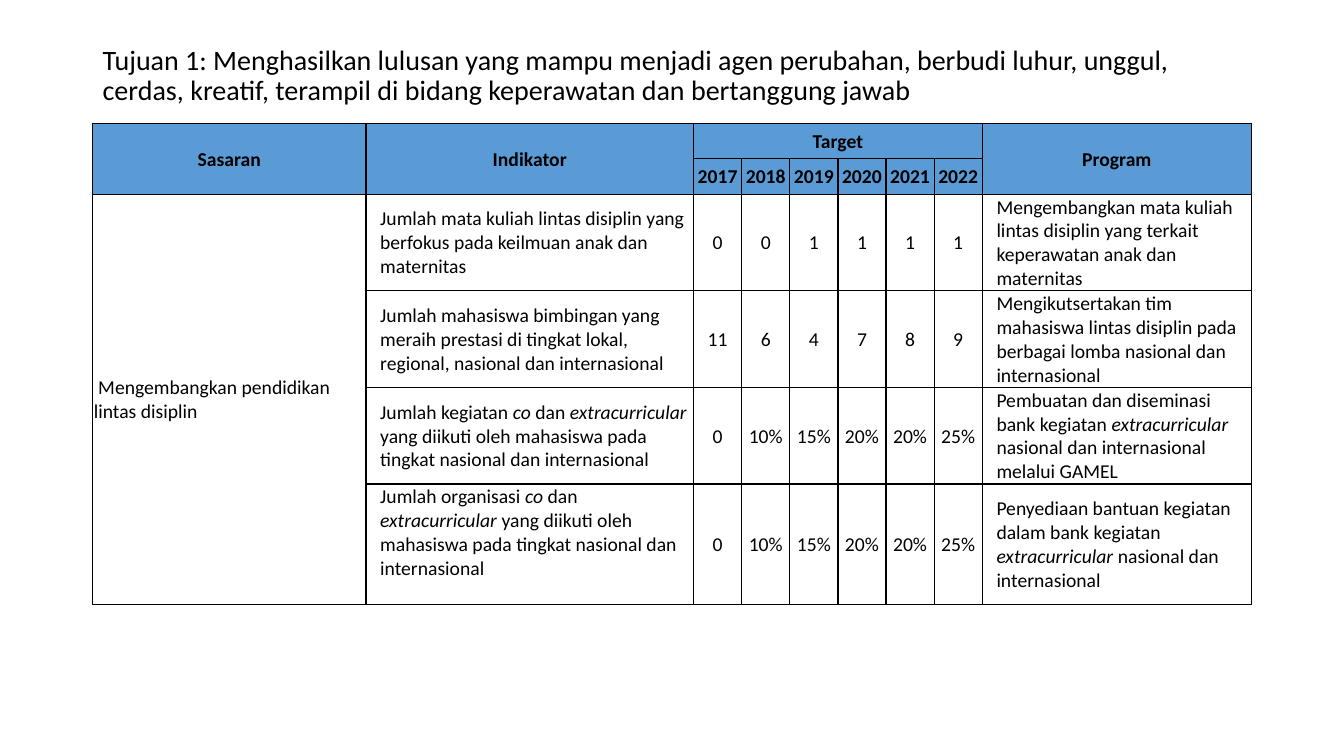
"""Build a slide with a table of goals, indicators, yearly targets and programmes."""
from dataclasses import dataclass

from lxml.etree import SubElement
from pptx import Presentation
from pptx.dml.color import RGBColor as Color
from pptx.enum.text import MSO_ANCHOR as Anchor, PP_ALIGN as Align
from pptx.oxml.ns import qn
from pptx.slide import Slide
from pptx.table import Table, _Cell as Cell
from pptx.text.text import _Paragraph as Paragraph
from pptx.util import Inches, Pt

COLORS = {"ink": "000000", "header": "5B9BD5"}
FONT = "Calibri"
SLIDE_WIDTH, SLIDE_HEIGHT = Inches(13.33), Inches(7.5)

LEFT, CONTENT_WIDTH = 6.9, 86.25
TITLE_TOP, TITLE_HEIGHT = 5.33, 9.47
TABLE_TOP = 16.3
YEARS = [str(year) for year in range(2017, 2023)]
FIRST_YEAR, PROGRAM = 2, 2 + len(YEARS)
COLUMNS = [20.33, 24.38] + [3.58] * len(YEARS) + [20.03]
ROWS = [4.7] * 2 + [12.78] * 3 + [15.9]
INDENT, CELL_MARGIN = 0.98, 0.08

TITLE = (
    "Tujuan 1: Menghasilkan lulusan yang mampu menjadi agen perubahan, berbudi luhur, "
    "unggul, cerdas, kreatif, terampil di bidang keperawatan dan bertanggung jawab"
)
GOAL = " Mengembangkan pendidikan lintas disiplin"


@dataclass
class Header:
    text: str
    row: int
    column: int
    last_row: int
    last_column: int


@dataclass
class Indicator:
    text: str
    targets: list[str]
    program: str
    anchor: Anchor = Anchor.MIDDLE


HEADERS = [
    Header("Sasaran", 0, 0, 1, 0),
    Header("Indikator", 0, 1, 1, 1),
    Header("Target", 0, FIRST_YEAR, 0, PROGRAM - 1),
    Header("Program", 0, PROGRAM, 1, PROGRAM),
] + [Header(year, 1, column, 1, column) for column, year in enumerate(YEARS, FIRST_YEAR)]

GROWTH = ["0", "10%", "15%", "20%", "20%", "25%"]
INDICATORS = [
    Indicator(
        "Jumlah mata kuliah lintas disiplin yang berfokus pada keilmuan anak dan maternitas",
        ["0", "0", "1", "1", "1", "1"],
        "Mengembangkan mata kuliah lintas disiplin yang terkait keperawatan anak dan maternitas",
    ),
    Indicator(
        "Jumlah mahasiswa bimbingan yang meraih prestasi di tingkat lokal, regional, "
        "nasional dan internasional",
        ["11", "6", "4", "7", "8", "9"],
        "Mengikutsertakan tim mahasiswa lintas disiplin pada berbagai lomba nasional "
        "dan internasional",
    ),
    Indicator(
        "Jumlah kegiatan *co *dan *extracurricular* yang diikuti oleh mahasiswa pada "
        "tingkat nasional dan internasional",
        GROWTH,
        "Pembuatan dan diseminasi bank kegiatan *extracurricular *nasional dan "
        "internasional melalui GAMEL",
    ),
    Indicator(
        "Jumlah organisasi *co *dan *extracurricular* yang diikuti oleh mahasiswa pada "
        "tingkat nasional dan internasional",
        GROWTH,
        "Penyediaan bantuan kegiatan dalam bank kegiatan *extracurricular *nasional dan "
        "internasional",
        Anchor.TOP,
    ),
]


def across(percent: float) -> int:
    """Turn a percentage of the slide width into a length."""
    return round(SLIDE_WIDTH * percent / 100)


def down(percent: float) -> int:
    """Turn a percentage of the slide height into a length."""
    return round(SLIDE_HEIGHT * percent / 100)


def write(paragraph: Paragraph, text: str, size: int, bold: bool = False) -> None:
    """Write text whose parts between asterisks are italic."""
    for index, part in enumerate(text.split("*")):
        run = paragraph.add_run()
        run.text = part
        if index % 2:
            run.font.italic = True
    font = paragraph.font
    font.name, font.size, font.bold = FONT, Pt(size), bold
    font.color.rgb = Color.from_string(COLORS["ink"])


def add_borders(cell: Cell) -> None:
    """Draw a thin line on every side of a cell."""
    properties = cell._tc.get_or_add_tcPr()
    for position, side in enumerate(("lnL", "lnR", "lnT", "lnB")):
        line = SubElement(properties, qn(f"a:{side}"), w=str(Pt(1)))
        fill = SubElement(line, qn("a:solidFill"))
        SubElement(fill, qn("a:srgbClr"), val=COLORS["ink"])
        properties.insert(position, line)


def fill_cell(cell: Cell, text: str, align: Align = Align.LEFT, indent: float = 0,
              bold: bool = False, anchor: Anchor = Anchor.MIDDLE) -> None:
    """Place one paragraph in a cell."""
    cell.vertical_anchor = anchor
    paragraph = cell.text_frame.paragraphs[0]
    paragraph.alignment = align
    if indent:
        paragraph._p.get_or_add_pPr().set("marL", str(across(indent)))
    write(paragraph, text, 14, bold)


def add_title(slide: Slide) -> None:
    """Add the goal statement above the table."""
    box = slide.shapes.add_textbox(
        across(LEFT), down(TITLE_TOP), across(CONTENT_WIDTH), down(TITLE_HEIGHT))
    box.text_frame.word_wrap = True
    box.text_frame.vertical_anchor = Anchor.MIDDLE
    paragraph = box.text_frame.paragraphs[0]
    paragraph.line_spacing = 0.9
    write(paragraph, TITLE, 20)


def add_grid(slide: Slide) -> Table:
    """Add the empty bordered table."""
    table = slide.shapes.add_table(
        len(ROWS), len(COLUMNS), across(LEFT), down(TABLE_TOP),
        across(sum(COLUMNS)), down(sum(ROWS))).table
    table.first_row = table.horz_banding = False
    for column, width in zip(table.columns, COLUMNS):
        column.width = across(width)
    for row, height in zip(table.rows, ROWS):
        row.height = down(height)
    for cell in table.iter_cells():
        cell.margin_left = cell.margin_right = cell.margin_top = across(CELL_MARGIN)
        cell.margin_bottom = 0
        cell.fill.background()
        add_borders(cell)
    return table


def fill_table(table: Table) -> None:
    """Write the headers, the goal and its indicators."""
    for header in HEADERS:
        cell = table.cell(header.row, header.column)
        last = table.cell(header.last_row, header.last_column)
        if cell != last:
            cell.merge(last)
        cell.fill.solid()
        cell.fill.fore_color.rgb = Color.from_string(COLORS["header"])
        fill_cell(cell, header.text, Align.CENTER, bold=True)
    goal = table.cell(2, 0)
    goal.merge(table.cell(len(ROWS) - 1, 0))
    fill_cell(goal, GOAL)
    for row, indicator in enumerate(INDICATORS, 2):
        fill_cell(table.cell(row, 1), indicator.text, indent=INDENT, anchor=indicator.anchor)
        for column, target in enumerate(indicator.targets, FIRST_YEAR):
            fill_cell(table.cell(row, column), target, Align.CENTER)
        fill_cell(table.cell(row, PROGRAM), indicator.program, indent=INDENT)


def main() -> None:
    """Build and save the presentation."""
    presentation = Presentation()
    presentation.slide_width, presentation.slide_height = SLIDE_WIDTH, SLIDE_HEIGHT
    slide = presentation.slides.add_slide(presentation.slide_layouts[6])
    add_title(slide)
    fill_table(add_grid(slide))
    presentation.save("out.pptx")


if __name__ == "__main__":
    main()
